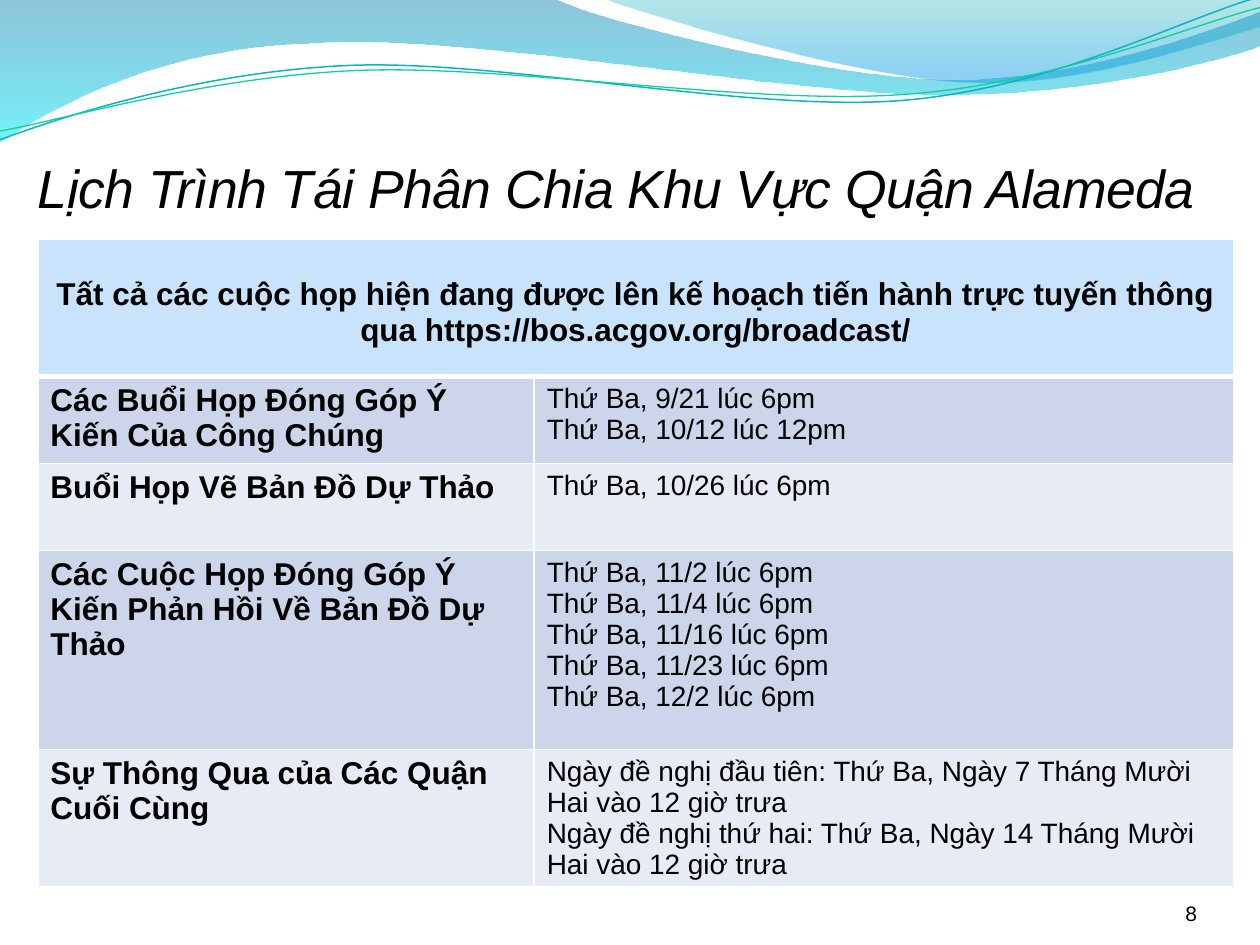
"""Build the county redistricting schedule slide."""
from pptx import Presentation
from pptx import util as u
from pptx.dml.color import RGBColor
from pptx.enum import text as t
from pptx.oxml import parse_xml
from pptx.oxml.ns import nsdecls, qn

IN = u.Inches
hue = RGBColor.from_string


def write(frame, words, size, bold=False, italic=False, align=t.PP_ALIGN.LEFT, space=0):
    frame.word_wrap = True
    for i, line in enumerate(words.split("\n")):
        para = frame.add_paragraph() if i else frame.paragraphs[0]
        para.alignment = align
        run = para.add_run()
        run.text = line
        font = run.font
        font.name, font.size = "Arial", u.Pt(size)
        font.bold, font.italic = bold, italic
        font.color.rgb = hue("000000")
        if space:
            run._r.get_or_add_rPr().set("spc", str(space))


def trace(start, parts, closed):
    """Draw cubic curves (six numbers) and lines (two numbers)."""
    pen = slide.shapes.build_freeform(IN(start[0]), IN(start[1]), scale=1.0)
    for part in parts:
        pts = [(IN(x), IN(y)) for x, y in zip(part[::2], part[1::2])]
        pen.add_line_segments(pts, close=False)
    if closed:
        pen.add_line_segments([], close=True)
    shape = pen.convert_to_shape()
    shape.shadow.inherit = False
    legs = iter(list(shape._element.iter(qn("a:lnTo"))))
    for part in parts:
        group = [next(legs) for _ in part[::2]]
        if len(group) == 3:
            bend = parse_xml(f"<a:cubicBezTo {nsdecls('a')}/>")
            group[0].addprevious(bend)
            for leg in group:
                bend.append(leg[0])
                leg.getparent().remove(leg)
    return shape


deck = Presentation()
deck.slide_width, deck.slide_height = IN(10), IN(7.5)
slide = deck.slides.add_slide(deck.slide_layouts[5])

waves = [
    ((0, 0), [(4.4, -0.01), (4.76, 0.17, 6.64, 0.63, 7.58, 0.63),
              (8.53, 0.63, 9.58, 0.26, 10, 0.09), (10.01, 0.36),
              (9.83, 0.44, 8.7, 0.76, 7.46, 0.75), (6.22, 0.75, 3.82, 0.28, 2.57, 0.34),
              (1.29, 0.36, 0.46, 0.83, -0.01, 1.13), (0, 0)],
     [(0, "0079AD", 44), (1, "00E9F7", 55)]),
    ((4.79, -0.01), [(5.09, 0.11, 6.82, 0.62, 7.69, 0.65),
                     (8.56, 0.69, 9.61, 0.32, 10, 0.21), (10, 0), (4.79, -0.01)],
     [(0, "00ABB4", 29), (0.8, "0099E4", 44)]),
]
for start, parts, stops in waves:
    wave = trace(start, parts, True)
    wave.line.fill.background()
    wave.fill.gradient()
    wave.fill.gradient_angle = 270
    for stop, (pos, tint, _) in zip(wave.fill.gradient_stops, stops):
        stop.position = pos
        stop.color.rgb = hue(tint)
    for node, (_, _, alpha) in zip(wave._element.iter(qn("a:srgbClr")), stops):
        node.append(parse_xml(f'<a:alpha {nsdecls("a")} val="{alpha * 1000}"/>'))

lines = [
    ((0, 1.11), [(0.48, 0.93, 1.58, 0.57, 2.77, 0.52), (3.95, 0.47, 5.93, 0.89, 7.13, 0.8),
                 (8.33, 0.71, 9.38, 0.15, 9.98, -0.02)], "09B6BE", 0.85),
    ((0, 1.04), [(0.47, 0.96, 1.64, 0.61, 2.83, 0.56), (4.03, 0.51, 5.97, 0.84, 7.17, 0.75),
                 (8.36, 0.67, 9.41, 0.21, 10, 0.06)], "10CF9B", 0.75),
]
for start, parts, tint, width in lines:
    curve = trace(start, parts, False)
    curve.fill.background()
    curve.line.color.rgb = hue(tint)
    curve.line.width = u.Pt(width)

title = slide.shapes.title
title.left, title.top, title.width, title.height = IN(0.3), IN(0.97), IN(9.49), IN(0.77)
number = slide.shapes.add_textbox(IN(8.67), IN(6.95), IN(0.83), IN(0.4))
for box in title, number:
    frame = box.text_frame
    frame.auto_size = t.MSO_AUTO_SIZE.NONE
    frame.vertical_anchor = t.MSO_ANCHOR.BOTTOM
    frame.margin_left = frame.margin_right = frame.margin_top = frame.margin_bottom = 0
title.text_frame.margin_top = IN(0.05)
write(title.text_frame, "Lịch Trình Tái Phân Chia Khu Vực Quận Alameda", 30.6,
      italic=True, space=-30)
write(number.text_frame, "8", 12, align=t.PP_ALIGN.RIGHT)

rows = [
    ("Các Buổi Họp Đóng Góp Ý Kiến Của Công Chúng",
     "Thứ Ba, 9/21 lúc 6pm\nThứ Ba, 10/12 lúc 12pm"),
    ("Buổi Họp Vẽ Bản Đồ Dự Thảo", "Thứ Ba, 10/26 lúc 6pm"),
    ("Các Cuộc Họp Đóng Góp Ý Kiến Phản Hồi Về Bản Đồ Dự Thảo",
     "\n".join(f"Thứ Ba, {day} lúc 6pm" for day in ("11/2", "11/4", "11/16", "11/23", "12/2"))),
    ("Sự Thông Qua của Các Quận Cuối Cùng",
     "Ngày đề nghị đầu tiên: Thứ Ba, Ngày 7 Tháng Mười Hai vào 12 giờ trưa\n"
     "Ngày đề nghị thứ hai: Thứ Ba, Ngày 14 Tháng Mười Hai vào 12 giờ trưa"),
]
table = slide.shapes.add_table(5, 2, IN(0.3), IN(1.9), IN(9.49), IN(5.13)).table
for col, width in zip(table.columns, (3.94, 5.55)):
    col.width = IN(width)
for row, height in zip(table.rows, (1.09, 0.69, 0.69, 1.58, 1.08)):
    row.height = IN(height)

for r in range(5):
    for c in range(2):
        cell = table.cell(r, c)
        for side in "LRTB":
            thick = 3 if (r, side) in ((0, "B"), (1, "T")) else 1
            cell._tc.get_or_add_tcPr().append(parse_xml(
                f'<a:ln{side} {nsdecls("a")} w="{u.Pt(thick)}"><a:solidFill>'
                f'<a:srgbClr val="FFFFFF"/></a:solidFill></a:ln{side}>'))
        cell.fill.solid()
        cell.fill.fore_color.rgb = hue("CCD5EA" if r % 2 else "E7EBF5" if r else "C8E3FB")
        if r:
            write(cell.text_frame, rows[r - 1][c], 16 if c else 18, bold=not c)

head = table.cell(0, 0)
head.merge(table.cell(0, 1))
head.margin_top = IN(0.3)
write(head.text_frame, "Tất cả các cuộc họp hiện đang được lên kế hoạch tiến hành trực tuyến "
      "thông qua https://bos.acgov.org/broadcast/", 18, bold=True, align=t.PP_ALIGN.CENTER)

deck.save("out.pptx")
